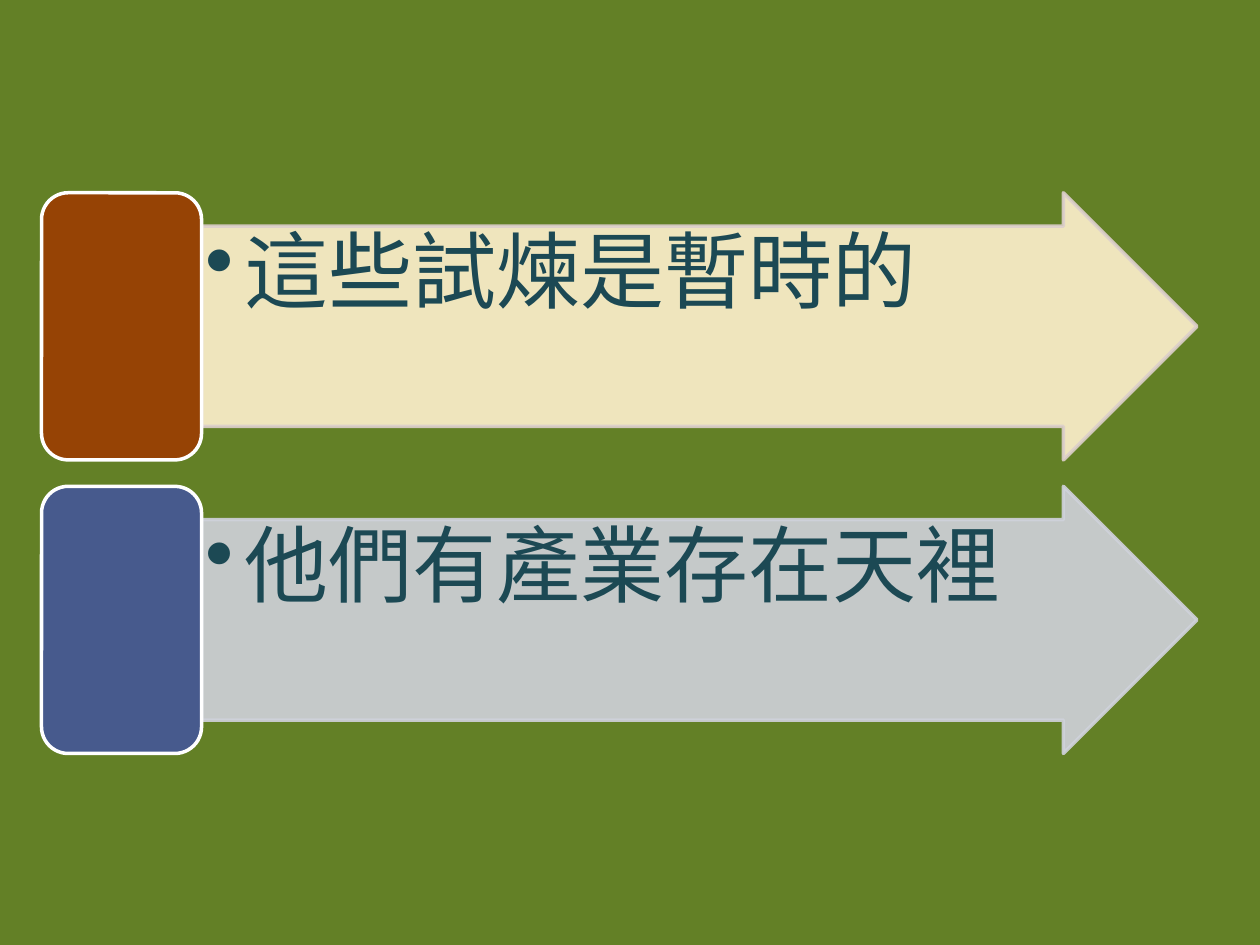
from dataclasses import dataclass

from lxml import etree
from pptx import Presentation
from pptx.dml.color import RGBColor
from pptx.enum.shapes import MSO_SHAPE
from pptx.oxml.ns import qn
from pptx.shapes.autoshape import Shape
from pptx.slide import Slide
from pptx.util import Inches, Pt

ARROW = MSO_SHAPE.RIGHT_ARROW
ROUNDED = MSO_SHAPE.ROUNDED_RECTANGLE
BLANK_LAYOUT = 6


@dataclass(frozen=True)
class Theme:
    background: str = "638026"
    text: str = "1C4954"
    block_line: str = "FFFFFF"
    font: str = "Lato"
    text_size: float = 48
    line_width: float = 2
    arrow_opacity: int = 90


@dataclass(frozen=True)
class Point:
    text: str
    block_fill: str
    arrow_fill: str
    arrow_line: str


THEME = Theme()
POINTS = [
    Point("這些試煉是暫時的", "964305", "FFF1CE", "DDCFCC"),
    Point("他們有產業存在天裡", "475A8D", "D0D2DB", "D0D2DB"),
]

# Row geometry in inches
BLOCK_LEFT, BLOCK_WIDTH = 0.33, 1.27
ARROW_LEFT, ARROW_WIDTH = BLOCK_LEFT + BLOCK_WIDTH, 7.9
FIRST_TOP, ROW_HEIGHT, ROW_PITCH = 1.53, 2.12, 2.33
SHAFT_SHARE = 0.75
SHAFT_HEIGHT = ROW_HEIGHT * SHAFT_SHARE
TEXT_WIDTH = 7.11
INSET, HANGING = 0.03, 0.31


def add_panel(page: Slide, kind: MSO_SHAPE, left: float, top: float,
              width: float, fill: str, line: str) -> Shape:
    """Draw a filled and outlined shape of one row's height."""
    panel = page.shapes.add_shape(
        kind, Inches(left), Inches(top), Inches(width), Inches(ROW_HEIGHT))
    panel.shadow.inherit = False
    panel.fill.solid()
    panel.fill.fore_color.rgb = RGBColor.from_string(fill)
    panel.line.color.rgb = RGBColor.from_string(line)
    panel.line.width = Pt(THEME.line_width)
    return panel


def set_opacity(panel: Shape, percent: int) -> None:
    """Make both the fill and the outline slightly transparent."""
    for color in panel.element.spPr.iter(qn("a:srgbClr")):
        etree.SubElement(color, qn("a:alpha")).set("val", str(percent * 1000))


def add_bullet_text(page: Slide, top: float, text: str) -> None:
    """Write one bulleted line at the top of the arrow's shaft."""
    box = page.shapes.add_textbox(
        Inches(ARROW_LEFT), Inches(top), Inches(TEXT_WIDTH), Inches(SHAFT_HEIGHT))
    frame = box.text_frame
    frame.word_wrap = True
    frame.margin_left = frame.margin_right = Inches(INSET)
    frame.margin_top = frame.margin_bottom = Inches(INSET)

    para = frame.paragraphs[0]
    para.text = text
    para.line_spacing = 0.9
    para.font.name = THEME.font
    para.font.size = Pt(THEME.text_size)
    para.font.color.rgb = RGBColor.from_string(THEME.text)

    # Hanging bullet, placed before the default run properties
    properties = para._p.get_or_add_pPr()
    properties.set("marL", str(Inches(HANGING)))
    properties.set("indent", str(-Inches(HANGING)))
    bullet = etree.Element(qn("a:buChar"), char="•")
    properties.find(qn("a:defRPr")).addprevious(bullet)


def add_point(page: Slide, top: float, point: Point) -> None:
    """Draw one row: arrow, its text and the coloured block."""
    arrow = add_panel(page, ARROW, ARROW_LEFT, top, ARROW_WIDTH,
                      point.arrow_fill, point.arrow_line)
    arrow.adjustments[0] = SHAFT_SHARE
    arrow.adjustments[1] = 0.5
    set_opacity(arrow, THEME.arrow_opacity)
    add_bullet_text(page, top + (ROW_HEIGHT - SHAFT_HEIGHT) / 2, point.text)
    add_panel(page, ROUNDED, BLOCK_LEFT, top, BLOCK_WIDTH,
              point.block_fill, THEME.block_line)


def main() -> None:
    deck = Presentation()
    deck.slide_width, deck.slide_height = Inches(10), Inches(7.5)
    page = deck.slides.add_slide(deck.slide_layouts[BLANK_LAYOUT])
    page.background.fill.solid()
    page.background.fill.fore_color.rgb = RGBColor.from_string(THEME.background)
    for row, point in enumerate(POINTS):
        add_point(page, FIRST_TOP + row * ROW_PITCH, point)
    deck.save("out.pptx")


if __name__ == "__main__":
    main()
